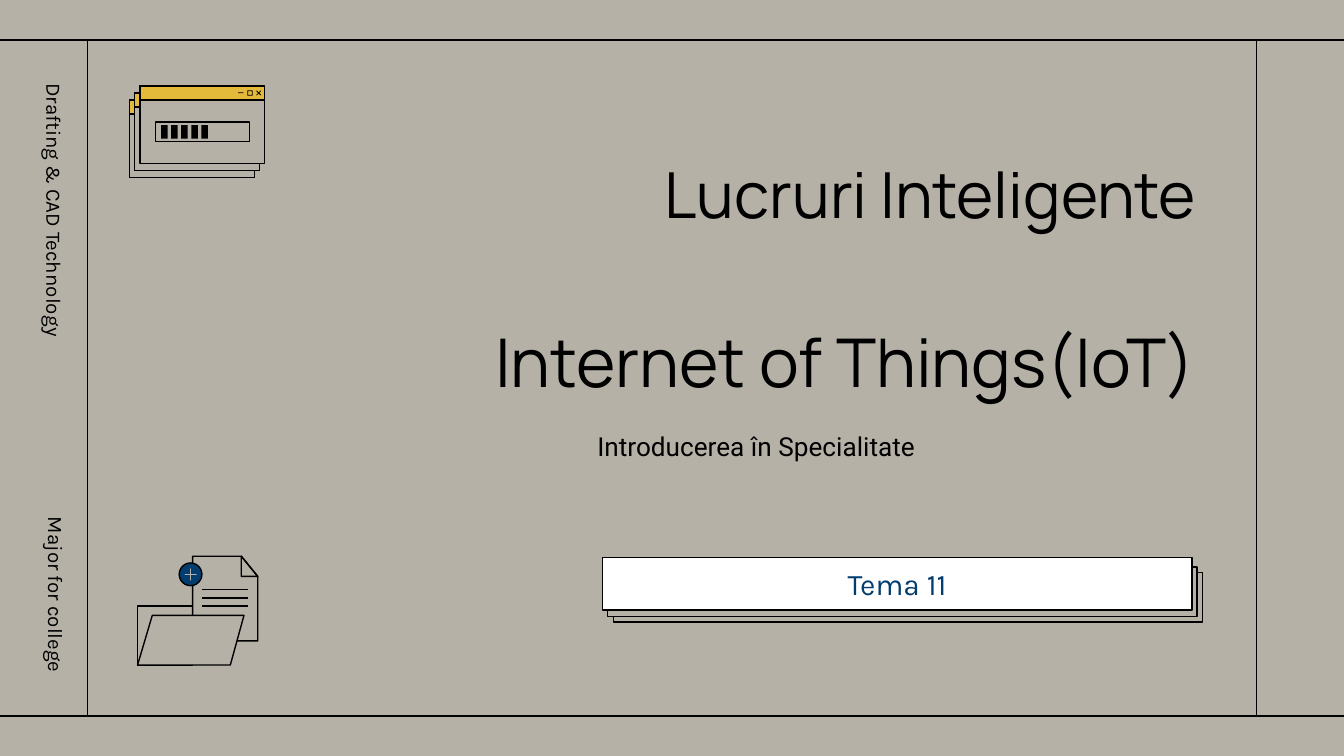
from lxml import etree
from pptx import Presentation
from pptx.dml.color import RGBColor
from pptx.enum import shapes, text
from pptx.oxml import ns
from pptx.util import Pt

STONE = RGBColor(0xB5, 0xB1, 0xA7)
BLACK = RGBColor(0, 0, 0)
WHITE = RGBColor(0xFF, 0xFF, 0xFF)
NAVY = RGBColor(0x02, 0x3D, 0x6F)
GOLD = RGBColor(0xE4, 0xBA, 0x3A)
KIND = shapes.MSO_SHAPE
ALIGN = text.PP_ALIGN
ANCHOR = text.MSO_ANCHOR
WIDTH, HEIGHT = 720, 405


def paint(shape, fill=None, line=BLACK):
    """Set the fill and outline of a shape; None means none."""
    if fill is None:
        shape.fill.background()
    else:
        shape.fill.solid()
        shape.fill.fore_color.rgb = fill
    if line is None:
        shape.line.fill.background()
    else:
        shape.line.color.rgb = line
        shape.line.width = Pt(0.75)


def add_block(page, kind, left, top, width, height, fill=None, line=BLACK):
    """Add a preset shape without shadow."""
    shape = page.shapes.add_shape(kind, Pt(left), Pt(top), Pt(width), Pt(height))
    shape.shadow.inherit = False
    paint(shape, fill, line)
    return shape


def add_outline(page, left, top, points, fill=None, line=BLACK):
    """Add a closed polygon whose points are relative to left and top."""
    corners = [(Pt(left + x), Pt(top + y)) for x, y in points]
    builder = page.shapes.build_freeform(*corners[0])
    builder.add_line_segments(corners[1:], close=True)
    shape = builder.convert_to_shape()
    shape.shadow.inherit = False
    paint(shape, fill, line)


def add_line(page, x1, y1, x2, y2):
    """Add a thin black straight line without shadow."""
    line = page.shapes.add_connector(
        shapes.MSO_CONNECTOR.STRAIGHT, Pt(x1), Pt(y1), Pt(x2), Pt(y2))
    line.line.color.rgb = BLACK
    line.line.width = Pt(0.75)
    etree.SubElement(line.element.spPr, ns.qn("a:effectLst"))


def write(box, words, font, size, color=BLACK, align=ALIGN.CENTER, inset=7.2,
          anchor=ANCHOR.MIDDLE):
    """Put one formatted paragraph into a box."""
    frame = box.text_frame
    frame.text = words
    frame.word_wrap = True
    frame.auto_size = text.MSO_AUTO_SIZE.NONE
    frame.vertical_anchor = anchor
    frame.margin_left = frame.margin_right = Pt(7.2)
    frame.margin_top = frame.margin_bottom = Pt(inset)
    para = frame.paragraphs[0]
    para.alignment = align
    para.space_before = Pt(0)
    span = para.runs[0]
    span.font.name = font
    span.font.size = Pt(size)
    span.font.color.rgb = color
    return para


def place(shape, left, top, width, height):
    """Move a placeholder to a box and bring it to the front."""
    shape.left, shape.top = Pt(left), Pt(top)
    shape.width, shape.height = Pt(width), Pt(height)
    shape.element.getparent().append(shape.element)
    return shape


def add_text_box(page, left, top, width, height):
    """Add an empty text box."""
    return page.shapes.add_textbox(Pt(left), Pt(top), Pt(width), Pt(height))


def draw_frame(page, top, bottom, margin):
    """Draw the ruled frame across the page."""
    for y in (top, bottom):
        add_line(page, 0, y, WIDTH, y)
    for x in (margin, WIDTH - margin):
        add_line(page, x, bottom, x, top)


def draw_headings(page):
    """Write the two headline lines and the course name."""
    title = place(page.shapes.title, 183.6, 63, 464.4, 80.6)
    write(title, "Lucruri Inteligente", "Manrope", 34, align=ALIGN.RIGHT)
    second = add_text_box(page, 112, 159.5, 535.7, 67)
    write(second, "Internet of Things(IoT)", "Manrope", 36, align=ALIGN.RIGHT)
    course = add_text_box(page, 171.8, 226.8, 466.6, 44.6)
    write(course, "Introducerea în Specialitate", "Roboto", 14,
          inset=3.6, anchor=ANCHOR.TOP)


def draw_topic(page, left, top, width, height):
    """Draw the topic label on its stack of cards."""
    for shift, fill in ((6, None), (3, STONE)):
        add_block(page, KIND.RECTANGLE, left + shift, top + shift + 2,
                  width - 0.3, height - 1.4, fill)
    label = place(page.placeholders[1], left, top, width, height)
    paint(label, WHITE)
    write(label, "Tema 11", "Karla", 16, NAVY)


def draw_folder(page, left, top):
    """Draw the folder with a document and a plus badge."""
    add_block(page, KIND.RECTANGLE, left, top + 26.6, 29.5, 31.7, STONE)
    add_outline(page, left, top, [
        (29.5, 0), (29.5, 45.4), (64.4, 45.4), (64.4, 10.8), (55.6, 0)])
    add_outline(page, left, top, [(55.6, 0), (55.6, 10.8), (64.4, 10.8)])
    add_outline(page, left, top, [
        (7.9, 31.7), (0, 58.3), (49.7, 58.3), (57, 31.7)], STONE)
    for row in range(3):
        y = top + 18 + 4.3 * row
        add_line(page, left + 34.6, y, left + 59, y)
    add_block(page, KIND.OVAL, left + 22.3, top + 3.6, 12.2, 12.2, NAVY)
    plus = add_block(page, KIND.MATH_PLUS, left + 24.5, top + 5.8, 7.9, 7.9,
                     STONE, STONE)
    plus.adjustments[0] = 0


def draw_buttons(page, right, middle):
    """Draw the minimise, maximise and close buttons of a window."""
    add_block(page, KIND.RECTANGLE, right - 14.2, middle - 0.3, 2.8, 0.5,
              BLACK, None)
    square = add_block(page, KIND.FRAME, right - 9.3, middle - 1.4, 2.8, 2.8,
                       BLACK, None)
    square.adjustments[0] = 0.15
    add_outline(page, right - 3.2, middle, [
        (-1.3, -1), (-1, -1.3), (0, -0.3), (1, -1.3), (1.3, -1), (0.3, 0),
        (1.3, 1), (1, 1.3), (0, 0.3), (-1, 1.3), (-1.3, 1), (-0.3, 0)],
        BLACK, None)


def draw_loading(page, left, top, width, height):
    """Draw the stack of windows with a progress bar on the front one."""
    for depth in (2, 1, 0):
        x, y = left - 2.8 * depth, top + 3.75 * depth
        add_block(page, KIND.RECTANGLE, x, y, width, height, STONE)
        add_block(page, KIND.RECTANGLE, x, y, width, 7.5, GOLD)
    draw_buttons(page, left + width, top + 3.8)
    add_block(page, KIND.RECTANGLE, left + 8.4, top + 19.3, 50.4, 10.6)
    for step in range(5):
        add_block(page, KIND.RECTANGLE, left + 11.3 + 5.4 * step, top + 21,
                  3.5, 7.3, BLACK, None)


def draw_side_text(page, words, left, top, width, align, spacing):
    """Write a line that reads downwards along the left margin."""
    box = add_text_box(page, left, top, width, 15.8)
    box.rotation = 90
    para = write(box, words, "Karla", 11, align=align)
    para.line_spacing = spacing


def build_cover(deck):
    """Build the cover slide."""
    page = deck.slides.add_slide(deck.slide_layouts[0])
    page.background.fill.solid()
    page.background.fill.fore_color.rgb = STONE
    draw_frame(page, 21.5, 383.6, 46.8)
    draw_headings(page)
    draw_topic(page, 322.6, 298.8, 316, 28)
    draw_folder(page, 73.7, 298)
    draw_loading(page, 75, 46, 66.8, 41.6)
    draw_side_text(page, "Drafting & CAD Technology", -53.3, 113, 167,
                   ALIGN.LEFT, 1.15)
    draw_side_text(page, "Major for college", -44.3, 285, 149, ALIGN.RIGHT, 1.0)


def main():
    """Create and save the deck."""
    deck = Presentation()
    deck.slide_width, deck.slide_height = Pt(WIDTH), Pt(HEIGHT)
    build_cover(deck)
    deck.save("out.pptx")


if __name__ == "__main__":
    main()
